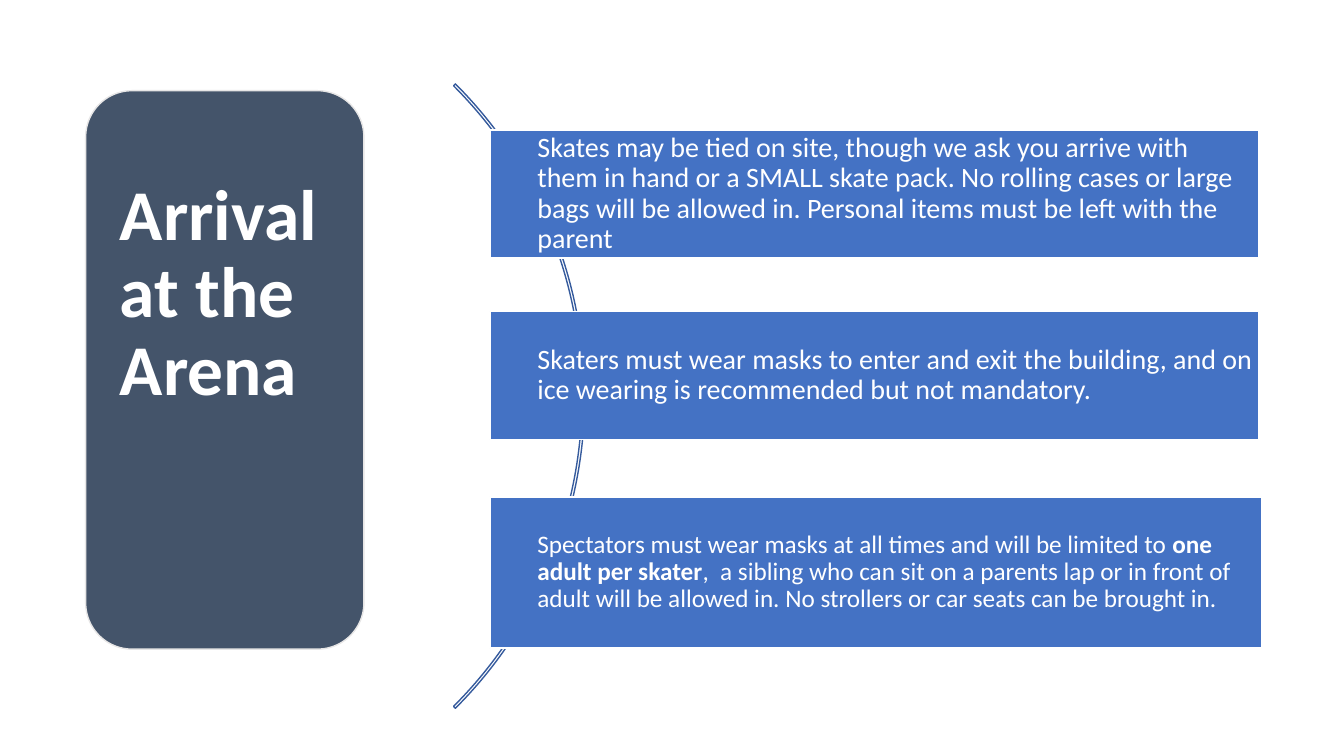
from dataclasses import dataclass
from pptx import Presentation
from pptx.dml.color import RGBColor
from pptx.enum import shapes, text
from pptx.util import Inches, Pt

TITLE = "Arrival at the Arena"
RULES = [
    (3.09 - 1.8, 7.62, 1.27, 20, [
        ("Skates may be tied on site, though we ask you arrive with them in hand "
         "or a SMALL skate pack. No rolling cases or large bags will be allowed in. "
         "Personal items must be left with the parent", False)]),
    (3.09, 7.62, 1.27, 20, [
        ("Skaters must wear masks to enter and exit the building, and on ice "
         "wearing is recommended but not mandatory.", False)]),
    (4.93, 7.65, 1.5, 18, [
        ("Spectators must wear masks at all times and will be limited to ", False),
        ("one adult per skater", True),
        (",  a sibling who can sit on a parents lap or in front of adult will be "
         "allowed in. No strollers or car seats can be brought in.", False)]),
]


@dataclass(frozen=True)
class Theme:
    font: str = "Calibri"
    head: int = 51
    white: str = "FFFFFF"
    blue: str = "4472C4"
    arc: str = "365B9D"
    slate: str = "44546A"
    edge: str = "E7E6E6"


LOOK = Theme()


def add_box(slide, kind, place, fill, line):
    box = slide.shapes.add_shape(kind, *map(Inches, place))
    box.shadow.inherit = False
    if fill:
        box.fill.solid()
        box.fill.fore_color.rgb = RGBColor.from_string(fill)
    else:
        box.fill.background()
    box.line.color.rgb = RGBColor.from_string(line)
    box.line.width = Pt(1)
    return box


def set_text(shape, parts, size, left, pad):
    frame = shape.text_frame
    frame.word_wrap = True
    frame.auto_size = text.MSO_AUTO_SIZE.NONE
    frame.vertical_anchor = text.MSO_ANCHOR.MIDDLE
    frame.margin_left = Inches(left)
    frame.margin_top = frame.margin_right = frame.margin_bottom = Inches(pad)
    para = frame.paragraphs[0]
    para.alignment = text.PP_ALIGN.LEFT
    para.line_spacing = 0.9
    for words, bold in parts:
        run = para.add_run()
        run.text = words
        run.font.name = LOOK.font
        run.font.size = Pt(size)
        run.font.bold = bold
        run.font.color.rgb = RGBColor.from_string(LOOK.white)


def main():
    deck = Presentation()
    deck.slide_width, deck.slide_height = Inches(13.33), Inches(7.5)
    slide = deck.slides.add_slide(deck.slide_layouts[5])
    kinds = shapes.MSO_SHAPE

    arc = add_box(slide, kinds.BLOCK_ARC, (-2.96, -0.45, 8.76, 8.76), None, LOOK.arc)
    for i, value in enumerate((189, 27, 0.003)):
        arc.adjustments[i] = value

    for top, width, height, size, parts in RULES:
        box = add_box(slide, kinds.RECTANGLE, (4.86, top, width, height),
                      LOOK.blue, LOOK.white)
        set_text(box, parts, size, 0.47, 0.03)

    add_box(slide, kinds.ROUNDED_RECTANGLE, (0.85, 0.9, 2.76, 5.54),
            LOOK.slate, LOOK.edge)
    title = slide.shapes.title
    title.left, title.top, title.width, title.height = map(
        Inches, (0.98, 0.67, 2.49, 4.51))
    set_text(title, [(TITLE, True)], LOOK.head, 0.21, 0.21)
    slide.shapes._spTree.append(title._element)

    deck.save("out.pptx")


if __name__ == "__main__":
    main()
